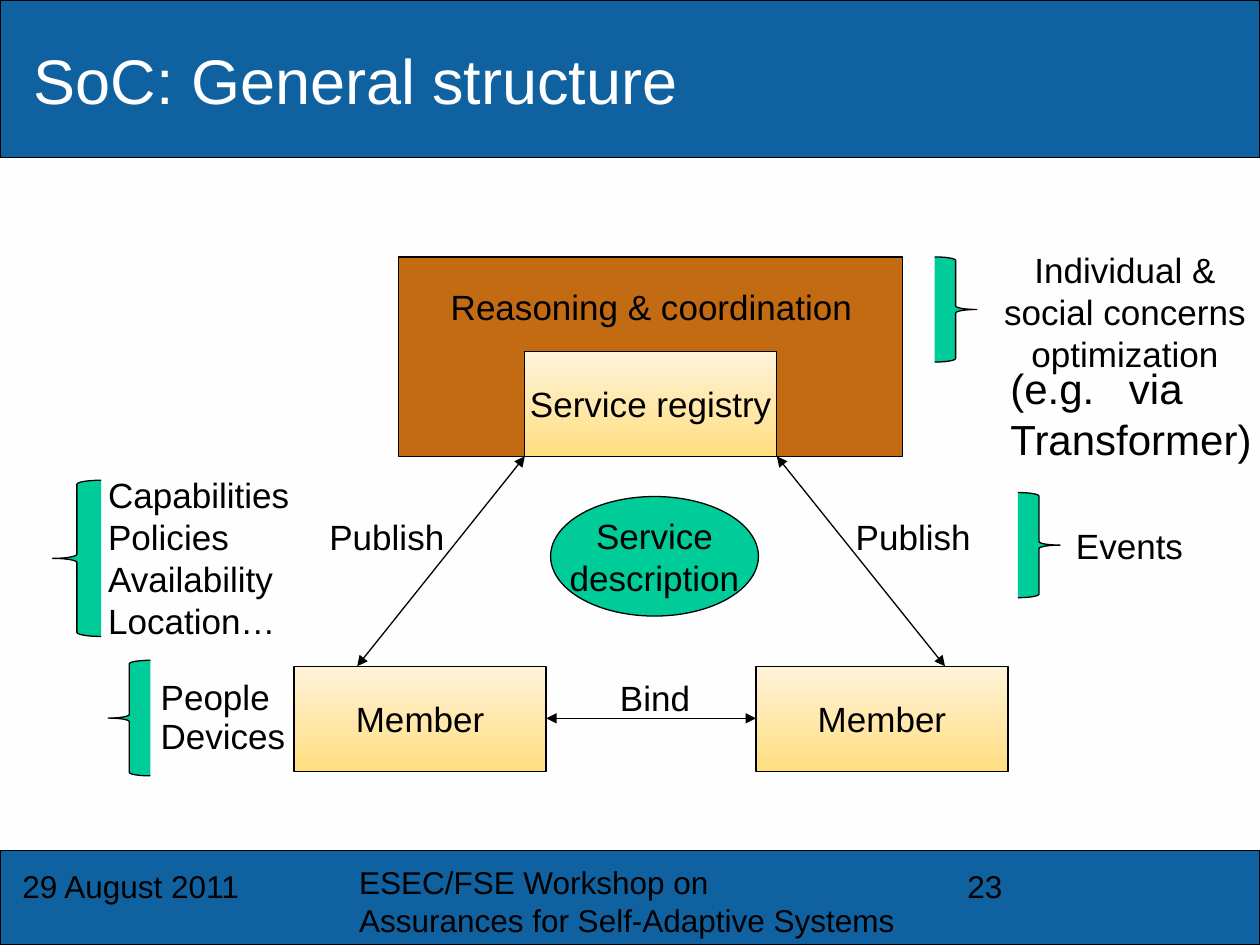
from dataclasses import dataclass

from lxml import etree
from pptx import Presentation
from pptx.dml.color import RGBColor
from pptx.enum.shapes import MSO_CONNECTOR, MSO_SHAPE
from pptx.enum.text import MSO_ANCHOR, PP_ALIGN
from pptx.oxml.ns import qn
from pptx.slide import Slide
from pptx.util import Cm, Pt

RECTANGLE = MSO_SHAPE.RECTANGLE
OVAL = MSO_SHAPE.OVAL
BRACE = MSO_SHAPE.RIGHT_BRACE
STRAIGHT = MSO_CONNECTOR.STRAIGHT
LEFT = PP_ALIGN.LEFT
CENTER = PP_ALIGN.CENTER
TOP = MSO_ANCHOR.TOP
MIDDLE = MSO_ANCHOR.MIDDLE


def color(value):
    return RGBColor.from_string(value)


@dataclass
class Diagram:
    """Style of the diagram and the slide it is drawn on."""

    page: Slide
    font: str = "Arial"
    ink: str = "000000"
    band: str = "1061A0"
    frame: str = "C36B13"
    accent: str = "00CC99"
    card_bottom: str = "FFDE80"
    card_top: str = "FFF3DA"
    line_width: float = 0.75

    def background(self, value):
        fill = self.page.background.fill
        fill.solid()
        fill.fore_color.rgb = color(value)

    def add_text(self, shape, paragraphs, size=20, align=CENTER, anchor=TOP, wrap=False, ink=None):
        frame = shape.text_frame
        frame.word_wrap = wrap
        frame.vertical_anchor = anchor
        for index, text in enumerate(paragraphs):
            para = frame.paragraphs[0] if index == 0 else frame.add_paragraph()
            para.text = text
            para.alignment = align
            para.font.name = self.font
            para.font.size = Pt(size)
            para.font.color.rgb = color(ink or self.ink)

    def shape(self, kind, place, fill):
        shape = self.page.shapes.add_shape(kind, *map(Cm, place))
        shape.shadow.inherit = False
        shape.fill.solid()
        shape.fill.fore_color.rgb = color(fill)
        shape.line.color.rgb = color(self.ink)
        shape.line.width = Pt(self.line_width)
        return shape

    def card(self, left, top, text):
        card = self.shape(RECTANGLE, (left, top, 5.08, 2.12), self.card_top)
        card.fill.gradient()
        card.fill.gradient_angle = 90
        for stop, value in zip(card.fill.gradient_stops, (self.card_bottom, self.card_top)):
            stop.color.rgb = color(value)
        self.add_text(card, [text], anchor=MIDDLE)

    def brace(self, place, rotation=0):
        brace = self.shape(BRACE, place, self.accent)
        brace.adjustments[0] = 0.083
        brace.rotation = rotation

    def label(self, place, *paragraphs, tab=None, **style):
        box = self.page.shapes.add_textbox(*map(Cm, place))
        if tab:
            properties = box.text_frame.paragraphs[0]._p.get_or_add_pPr()
            stops = etree.SubElement(properties, qn("a:tabLst"))
            etree.SubElement(stops, qn("a:tab"), pos=str(Cm(tab)), algn="l")
        self.add_text(box, paragraphs, **style)

    def arrow(self, *ends):
        arrow = self.page.shapes.add_connector(STRAIGHT, *map(Cm, ends))
        arrow.line.color.rgb = color(self.ink)
        arrow.line.width = Pt(self.line_width)
        outline = arrow.line._get_or_add_ln()
        for end in ("a:headEnd", "a:tailEnd"):
            etree.SubElement(outline, qn(end), type="triangle")
        etree.SubElement(arrow._element.spPr, qn("a:effectLst"))


def main():
    deck = Presentation()
    deck.slide_width, deck.slide_height = Cm(25.4), Cm(19.05)
    diagram = Diagram(deck.slides.add_slide(deck.slide_layouts[6]))
    diagram.background("FEFEFE")

    for top, height in ((17.15, 1.9), (0, 3.18)):
        diagram.shape(RECTANGLE, (0, top, 25.4, height), diagram.band)
    diagram.label((0.43, 0, 21.36, 3.18), "SoC: General structure",
                  size=36, align=LEFT, anchor=MIDDLE, wrap=True, ink="FFFFFF")

    diagram.shape(RECTANGLE, (8.04, 5.18, 10.16, 4.02), diagram.frame)
    for left, top, text in ((5.93, 13.43, "Member"), (15.24, 13.43, "Member"),
                            (10.58, 7.08, "Service registry")):
        diagram.card(left, top, text)
    description = diagram.shape(OVAL, (11.1, 10.01, 4.19, 2.41), diagram.accent)
    diagram.add_text(description, ["Service", "description"], anchor=MIDDLE)

    diagram.arrow(7.2, 13.43, 10.58, 9.2)
    diagram.arrow(19.05, 13.43, 15.66, 9.2)
    diagram.arrow(11.01, 14.48, 15.24, 14.48)

    for left in (6.38, 16.99):
        diagram.label((left, 10.26, 2.84, 1.12), "Publish")
    diagram.label((12.24, 13.51, 1.93, 1.12), "Bind")
    diagram.label((8.69, 5.64, 8.89, 1.12), "Reasoning & coordination", wrap=True)

    for left, top in ((18.84, 5.18), (20.52, 9.93)):
        diagram.brace((left, top, 0.85, 2.12))
    diagram.brace((1.06, 9.68, 0.98, 3.15), 180)
    diagram.brace((2.18, 13.31, 0.85, 2.33), 180)

    diagram.label((19.96, 4.88, 5.44, 2.82),
                  "Individual &", "social concerns", "optimization")
    diagram.label((20.12, 7.19, 5.44, 2.31), "(e.g.\tvia\vTransformer)",
                  size=24, align=LEFT, tab=2.39)
    diagram.label((1.93, 9.42, 4.19, 3.68),
                  "Capabilities", "Policies", "Availability", "Location…", align=LEFT)
    diagram.label((21.44, 10.44, 2.69, 1.12), "Events", align=LEFT)
    diagram.label((2.97, 13.49, 2.74, 1.12), "People")
    diagram.label((2.97, 14.27, 3.05, 1.12), "Devices")

    for left, top, width, text in (
        (0.2, 17.35, 5.92, "29 August 2011"),
        (19.25, 17.35, 5.92, "23"),
        (6.99, 17.27, 11.63, "ESEC/FSE Workshop on \vAssurances for Self-Adaptive Systems"),
    ):
        diagram.label((left, top, width, 1.32), text, size=18, align=LEFT, wrap=True)

    deck.save("out.pptx")


if __name__ == "__main__":
    main()
